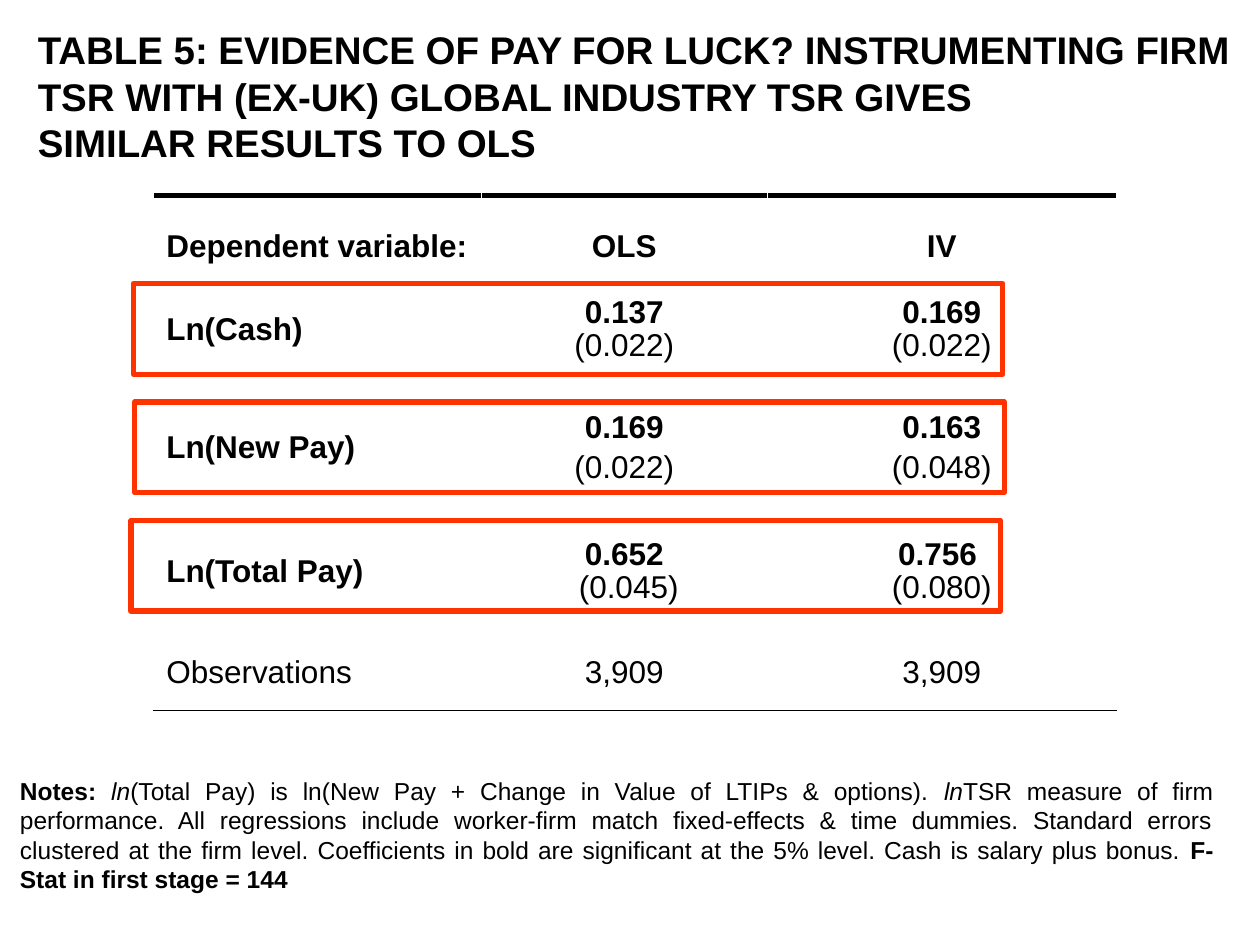
"""Build the slide that compares OLS and IV pay regressions."""
from dataclasses import dataclass
from typing import Any

import pptx
import pptx.dml.color
import pptx.enum.shapes
import pptx.enum.text
import pptx.oxml
import pptx.oxml.ns
import pptx.util

Inches = pptx.util.Inches
Pt = pptx.util.Pt
Align = pptx.enum.text.PP_ALIGN
Anchor = pptx.enum.text.MSO_ANCHOR
Fit = pptx.enum.text.MSO_AUTO_SIZE


@dataclass(frozen=True)
class Theme:
    face: str = "Arial"
    ink: str = "000000"
    mark: str = "FF3300"
    title: int = 22
    body: int = 18
    note: int = 14


@dataclass(frozen=True)
class Run:
    text: str
    bold: bool = False
    slant: bool = False


@dataclass(frozen=True)
class Row:
    high: float
    label: Run
    cells: tuple[tuple[Run, ...], ...]
    gaps: tuple[float, float] = (0, 0)
    anchor: Any = Anchor.MIDDLE


@dataclass(frozen=True)
class Box:
    left: float
    top: float
    width: float
    high: float


THEME = Theme()


def pair(value: str, error: str) -> tuple[Run, ...]:
    """Return a bold estimate above its standard error."""
    return Run(value, True), Run(error)


GAP = 3.6
COLS = (2.6, 2.27, 2.77)
GRID = Box(1.22, 1.55, sum(COLS), 4.09)
HEAD = Box(0.2, 0.16, 9.78, 1.21)
NOTE = Box(0.06, 6.11, 9.67, 1.04)
MARKS = tuple(Box(left, 2.25 + 0.94 * i, 6.9, 0.72)
              for i, left in enumerate((1.06, 1.07, 1.04)))
ROWS = (
    Row(0.6, Run("Dependent variable:", True),
        ((Run("OLS", True),), (Run("IV", True),)), anchor=Anchor.BOTTOM),
    Row(0.94, Run("Ln(Cash)", True),
        (pair("0.137", "(0.022)"), pair("0.169", "(0.022)")), (GAP, 0)),
    Row(0.94, Run("Ln(New Pay)", True),
        (pair("0.169", "(0.022)"), pair("0.163", "(0.048)")), (0, GAP)),
    Row(1.02, Run("Ln(Total Pay)", True),
        (pair("0.652", " (0.045)"), pair("0.756 ", "(0.080)"))),
    Row(0.59, Run("Observations"), ((Run("3,909"),), (Run("3,909"),))),
)
LINES = (
    "TABLE 5: EVIDENCE OF PAY FOR LUCK? INSTRUMENTING FIRM",
    "TSR WITH (EX-UK) GLOBAL INDUSTRY TSR GIVES",
    "SIMILAR RESULTS TO OLS",
)
NOTES = (
    Run("Notes: ", True),
    Run("ln", slant=True),
    Run("(Total Pay) is ln(New Pay + Change in Value of LTIPs & options). "),
    Run("ln", slant=True),
    Run("TSR measure of firm performance. All regressions include worker-firm "
        "match fixed-effects & time dummies. Standard errors clustered at the "
        "firm level. Coefficients in bold are significant at the 5% level. "
        "Cash is salary plus bonus. "),
    Run("F-Stat in first stage = 144", True),
)


def apply(item: Any, form: dict[str, Any]) -> None:
    """Set each named format value on the item."""
    for name, value in form.items():
        setattr(item, name, value)


def place(box: Box) -> tuple[int, ...]:
    """Return the box as slide lengths."""
    return tuple(Inches(n) for n in (box.left, box.top, box.width, box.high))


def color(code: str) -> Any:
    """Return the colour for a hex code."""
    return pptx.dml.color.RGBColor.from_string(code)


def write(frame: Any, paras: Any, size: int, form: dict[str, Any]) -> None:
    """Fill the frame with paragraphs of formatted runs."""
    for i, runs in enumerate(paras):
        para = frame.add_paragraph() if i else frame.paragraphs[0]
        apply(para, form)
        for run in runs:
            part = para.add_run()
            part.text = run.text
            apply(part.font, {"name": THEME.face, "size": Pt(size),
                              "bold": run.bold, "italic": run.slant})
            part.font.color.rgb = color(THEME.ink)


def rule(cell: Any, side: str, width: float) -> None:
    """Draw one border of a cell."""
    space = pptx.oxml.ns.nsdecls("a")
    line = pptx.oxml.parse_xml(
        f'<a:{side} {space} w="{Pt(width)}"><a:solidFill>'
        f'<a:srgbClr val="{THEME.ink}"/></a:solidFill></a:{side}>')
    cell._tc.get_or_add_tcPr().insert(0, line)


def draw_head(slide: Any) -> None:
    """Place and fill the title."""
    title = slide.shapes.title
    apply(title, dict(zip(("left", "top", "width", "height"), place(HEAD))))
    frame = title.text_frame
    apply(frame, {"word_wrap": False, "auto_size": Fit.NONE,
                  "vertical_anchor": Anchor.TOP})
    write(frame, [[Run(line, True)] for line in LINES], THEME.title,
          {"alignment": Align.LEFT, "space_before": Pt(0)})


def draw_grid(slide: Any) -> None:
    """Draw the regression table."""
    table = slide.shapes.add_table(len(ROWS), len(COLS), *place(GRID)).table
    apply(table, {"first_row": False, "horz_banding": False})
    for col, width in zip(table.columns, COLS):
        col.width = Inches(width)
    for i, row in enumerate(ROWS):
        table.rows[i].height = Inches(row.high)
        for j, runs in enumerate(((row.label,), *row.cells)):
            cell = table.cell(i, j)
            cell.fill.background()
            cell.vertical_anchor = row.anchor
            write(cell.text_frame, [[run] for run in runs], THEME.body,
                  {"alignment": Align.CENTER if j else Align.LEFT,
                   "line_spacing": 0.95,
                   "space_before": Pt(row.gaps[min(j, 1)])})
            if i == 0:
                rule(cell, "lnT", 3)
            if i == len(ROWS) - 1:
                rule(cell, "lnB", 1)


def draw_note(slide: Any) -> None:
    """Add the notes under the table."""
    frame = slide.shapes.add_textbox(*place(NOTE)).text_frame
    frame.word_wrap = True
    write(frame, [NOTES], THEME.note, {"alignment": Align.JUSTIFY})


def draw_mark(slide: Any, box: Box) -> None:
    """Frame one row of estimates."""
    kind = pptx.enum.shapes.MSO_SHAPE.RECTANGLE
    shape = slide.shapes.add_shape(kind, *place(box))
    shape.shadow.inherit = False
    shape.fill.background()
    shape.line.color.rgb = color(THEME.mark)
    shape.line.width = Pt(3)


def main() -> None:
    """Build and save the slide."""
    deck = pptx.Presentation()
    apply(deck, {"slide_width": Inches(10), "slide_height": Inches(7.5)})
    slide = deck.slides.add_slide(deck.slide_layouts.get_by_name("Title Only"))
    draw_head(slide)
    draw_grid(slide)
    draw_note(slide)
    for box in MARKS:
        draw_mark(slide, box)
    deck.save("out.pptx")


if __name__ == "__main__":
    main()
